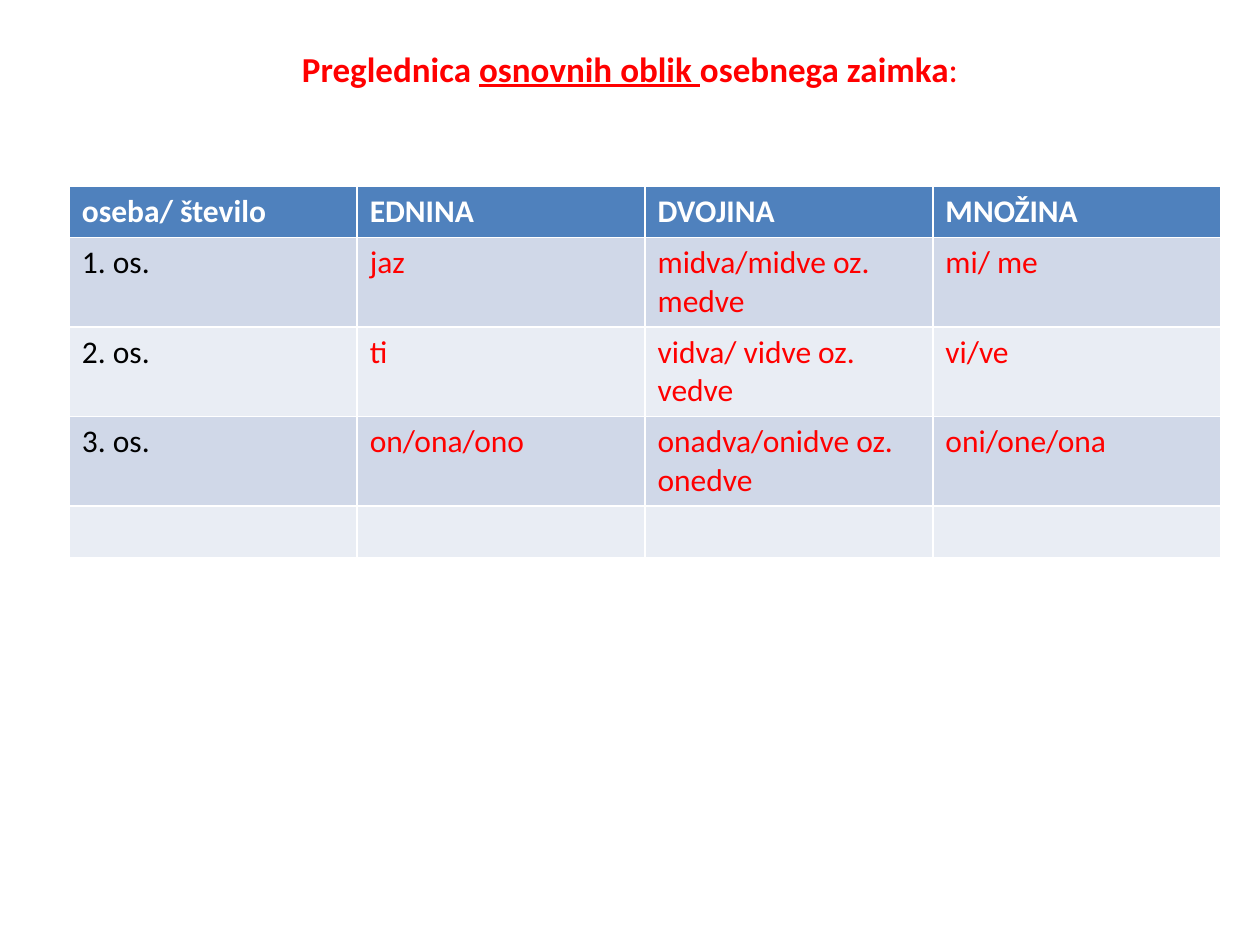
from pptx import Presentation
from pptx.dml.color import RGBColor
from pptx.enum.text import MSO_ANCHOR, PP_ALIGN
from pptx.util import Inches, Pt

RED = RGBColor(0xFF, 0x00, 0x00)
BLACK = RGBColor(0x00, 0x00, 0x00)
WHITE = RGBColor(0xFF, 0xFF, 0xFF)
HEADER_BLUE = RGBColor(0x4F, 0x81, 0xBD)
BANDS = (RGBColor(0xE9, 0xED, 0xF4), RGBColor(0xD0, 0xD8, 0xE8))

PRONOUNS = [
    ["oseba/ število", "EDNINA", "DVOJINA", "MNOŽINA"],
    ["1. os.", "jaz", "midva/midve oz.\nmedve", "mi/ me"],
    ["2. os.", "ti", "vidva/ vidve oz.\nvedve", "vi/ve"],
    ["3. os.", "on/ona/ono", "onadva/onidve oz.\nonedve", "oni/one/ona"],
    ["", "", "", ""],
]
ROW_HEIGHTS = [0.4, 0.7, 0.7, 0.7, 0.4]
COLUMN_WIDTH = 2.285


def add_text(paragraph, text, size=18, color=BLACK, bold=False, underline=False):
    run = paragraph.add_run()
    run.text = text
    font = run.font
    font.name = "Calibri"
    font.size = Pt(size)
    font.color.rgb = color
    font.bold = bold
    font.underline = underline


def add_heading(slide):
    heading = slide.shapes.title
    heading.left, heading.top = Inches(0.5), Inches(0.3)
    heading.width, heading.height = Inches(9), Inches(0.48)
    frame = heading.text_frame
    frame.vertical_anchor = MSO_ANCHOR.MIDDLE
    line = frame.paragraphs[0]
    line.alignment = PP_ALIGN.CENTER
    add_text(line, "Preglednica ", size=20, color=RED, bold=True)
    add_text(line, "osnovnih oblik ", size=20, color=RED, bold=True, underline=True)
    add_text(line, "osebnega zaimka", size=20, color=RED, bold=True)
    add_text(line, ":", size=20, color=RED)


def fill_cell(cell, text, background, **text_format):
    cell.fill.solid()
    cell.fill.fore_color.rgb = background
    frame = cell.text_frame
    for index, line in enumerate(text.splitlines()):
        paragraph = frame.add_paragraph() if index else frame.paragraphs[0]
        add_text(paragraph, line, **text_format)


def add_pronoun_table(slide):
    columns = len(PRONOUNS[0])
    table = slide.shapes.add_table(
        len(PRONOUNS), columns, Inches(0.55), Inches(1.48),
        Inches(COLUMN_WIDTH * columns), Inches(sum(ROW_HEIGHTS)),
    ).table
    for column in table.columns:
        column.width = Inches(COLUMN_WIDTH)
    for row, (forms, height) in enumerate(zip(PRONOUNS, ROW_HEIGHTS)):
        table.rows[row].height = Inches(height)
        for column, text in enumerate(forms):
            cell = table.cell(row, column)
            if row == 0:
                fill_cell(cell, text, HEADER_BLUE, color=WHITE, bold=True)
            else:
                fill_cell(cell, text, BANDS[row % 2], color=RED if column else BLACK)


def main():
    presentation = Presentation()
    presentation.slide_width = Inches(10)
    presentation.slide_height = Inches(7.5)
    slide = presentation.slides.add_slide(presentation.slide_layouts[5])
    add_heading(slide)
    add_pronoun_table(slide)
    presentation.save("out.pptx")


if __name__ == "__main__":
    main()
